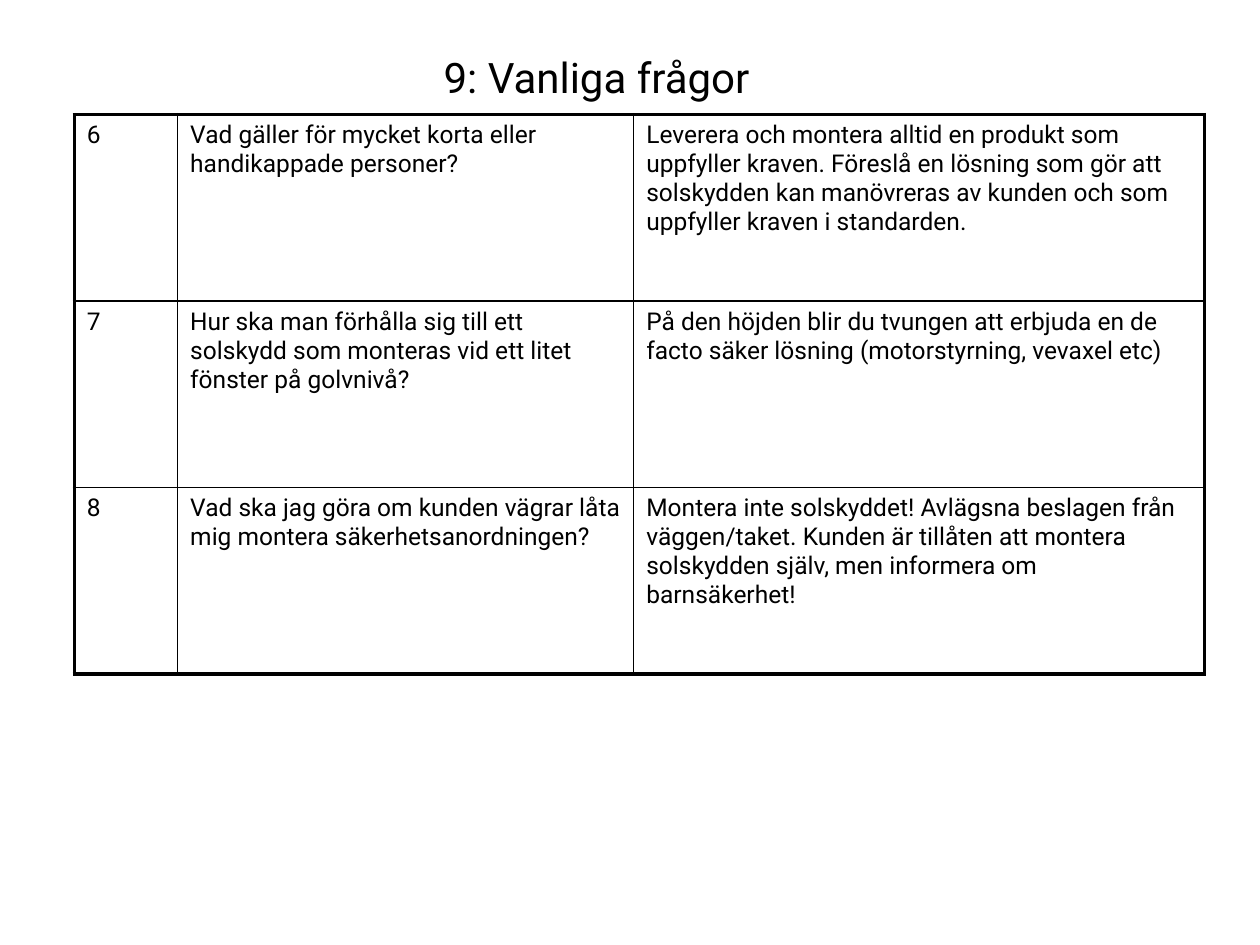
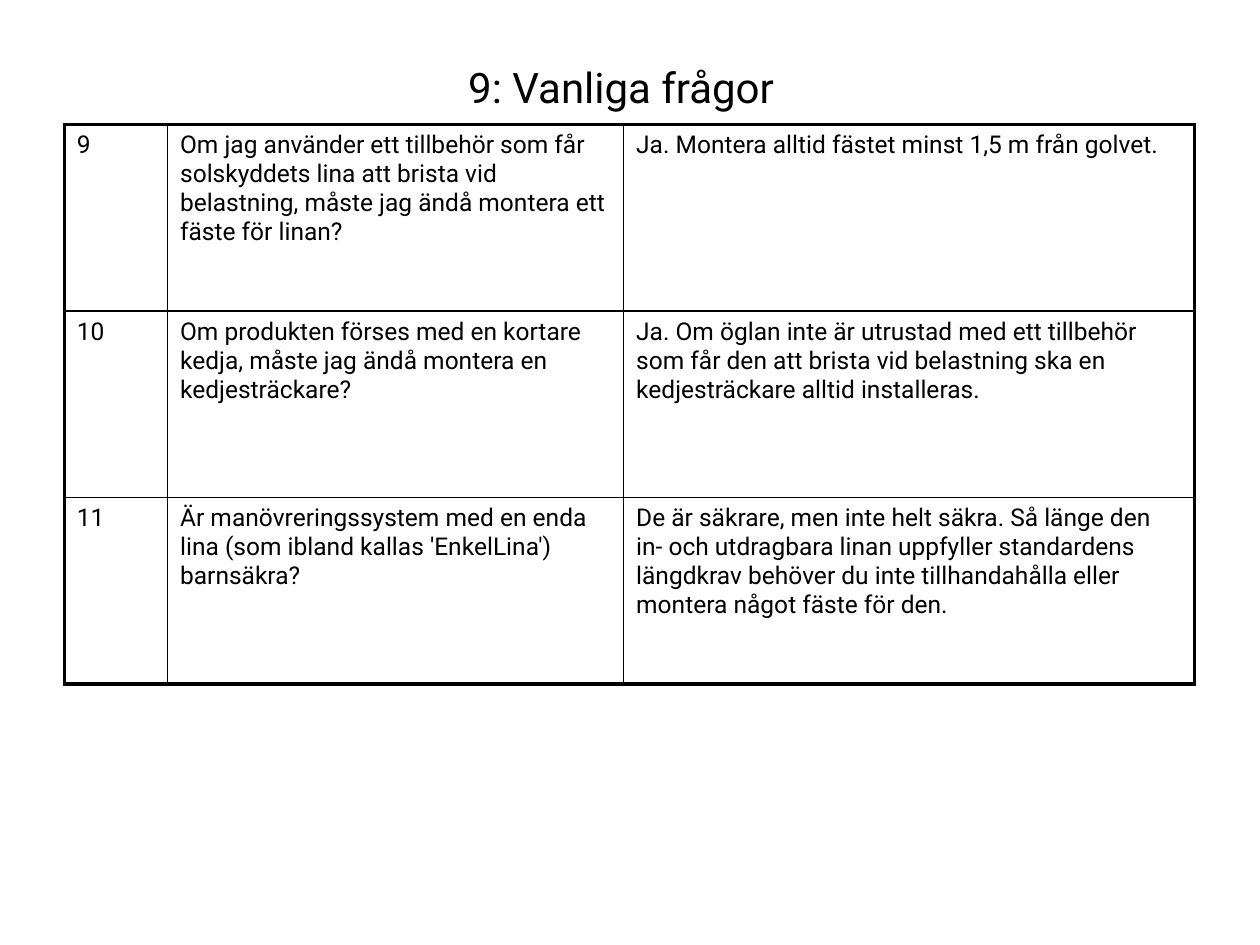
from dataclasses import dataclass

import lxml.etree
import pptx
import pptx.dml.color
import pptx.enum.text
import pptx.oxml.ns
import pptx.slide
import pptx.table
import pptx.text.text
import pptx.util

EMU_PER_PX = 9144
SLIDE_SIZE = (1000, 750)
TITLE_ONLY_LAYOUT = 5
FONT_NAME = "Roboto"
TEXT_COLOR = "000000"
BORDER_COLOR = "000000"
TITLE_TEXT = "9: Vanliga frågor"
TITLE_POINTS = 24
CELL_POINTS = 14
COLUMN_WIDTHS = (82, 362, 453)
ROW_HEIGHT = 148
OUTER_BORDER = 2.25
INNER_BORDER = 1


@dataclass(frozen=True)
class Box:
    left: int
    top: int
    width: int
    height: int


@dataclass(frozen=True)
class Question:
    number: int
    question: str
    answer: str


@dataclass(frozen=True)
class QuestionSlide:
    title_box: Box
    table_left: int
    table_top: int
    questions: tuple[Question, ...]


QUESTION_SLIDES = (
    QuestionSlide(Box(193, 21, 561, 79), 59, 91, (
        Question(
            6,
            "Vad gäller för mycket korta eller handikappade personer?",
            "Leverera och montera alltid en produkt som uppfyller kraven. "
            "Föreslå en lösning som gör att solskydden kan manövreras av kunden "
            "och som uppfyller kraven i standarden.",
        ),
        Question(
            7,
            "Hur ska man förhålla sig till ett solskydd som monteras vid ett "
            "litet fönster på golvnivå?",
            "På den höjden blir du tvungen att erbjuda en de facto säker lösning "
            "(motorstyrning, vevaxel etc)",
        ),
        Question(
            8,
            "Vad ska jag göra om kunden vägrar låta mig montera "
            "säkerhetsanordningen?",
            "Montera inte solskyddet! Avlägsna beslagen från väggen/taket. "
            "Kunden är tillåten att montera solskydden själv, men informera om "
            "barnsäkerhet!",
        ),
    )),
    QuestionSlide(Box(224, 21, 538, 95), 51, 99, (
        Question(
            9,
            "Om jag använder ett tillbehör som får solskyddets lina att brista "
            "vid belastning, måste jag ändå montera ett fäste för linan?",
            "Ja. Montera alltid fästet minst 1,5 m från golvet.",
        ),
        Question(
            10,
            "Om produkten förses med en kortare kedja, måste jag ändå montera "
            "en kedjesträckare?",
            "Ja. Om öglan inte är utrustad med ett tillbehör som får den att "
            "brista vid belastning ska en kedjesträckare alltid installeras.",
        ),
        Question(
            11,
            "Är manövreringssystem med en enda lina (som ibland kallas "
            "'EnkelLina') barnsäkra?",
            "De är säkrare, men inte helt säkra. Så länge den in- och utdragbara "
            "linan uppfyller standardens längdkrav behöver du inte "
            "tillhandahålla eller montera något fäste för den.",
        ),
    )),
)


def px(length: int) -> pptx.util.Emu:
    return pptx.util.Emu(length * EMU_PER_PX)


def color(value: str) -> pptx.dml.color.RGBColor:
    return pptx.dml.color.RGBColor.from_string(value)


def format_text(paragraph: pptx.text.text._Paragraph, points: int) -> None:
    paragraph.font.name = FONT_NAME
    paragraph.font.size = pptx.util.Pt(points)
    paragraph.font.bold = False
    paragraph.font.color.rgb = color(TEXT_COLOR)


def add_title(slide: pptx.slide.Slide, box: Box) -> None:
    title = slide.shapes.title
    title.left, title.top = px(box.left), px(box.top)
    title.width, title.height = px(box.width), px(box.height)
    title.text_frame.text = TITLE_TEXT
    title.text_frame.vertical_anchor = pptx.enum.text.MSO_ANCHOR.MIDDLE
    paragraph = title.text_frame.paragraphs[0]
    paragraph.alignment = pptx.enum.text.PP_ALIGN.CENTER
    format_text(paragraph, TITLE_POINTS)


def set_borders(cell: pptx.table._Cell, outer_sides: dict[str, bool]) -> None:
    qn = pptx.oxml.ns.qn
    properties = cell._tc.get_or_add_tcPr()
    for index, (side, is_outer) in enumerate(outer_sides.items()):
        points = OUTER_BORDER if is_outer else INNER_BORDER
        line = lxml.etree.Element(qn(f"a:ln{side}"), w=str(pptx.util.Pt(points)))
        fill = lxml.etree.SubElement(line, qn("a:solidFill"))
        lxml.etree.SubElement(fill, qn("a:srgbClr"), val=BORDER_COLOR)
        properties.insert(index, line)


def add_question_table(slide: pptx.slide.Slide, content: QuestionSlide) -> None:
    row_count, column_count = len(content.questions), len(COLUMN_WIDTHS)
    table = slide.shapes.add_table(
        row_count, column_count, px(content.table_left), px(content.table_top),
        px(sum(COLUMN_WIDTHS)), px(ROW_HEIGHT * row_count),
    ).table
    table.first_row = False
    table.horz_banding = False
    for column, width in zip(table.columns, COLUMN_WIDTHS):
        column.width = px(width)
    for row_index, question in enumerate(content.questions):
        texts = (str(question.number), question.question, question.answer)
        for column_index, text in enumerate(texts):
            cell = table.cell(row_index, column_index)
            cell.text = text
            cell.fill.background()
            format_text(cell.text_frame.paragraphs[0], CELL_POINTS)
            set_borders(cell, {
                "L": column_index == 0,
                "R": column_index == column_count - 1,
                "T": row_index == 0,
                "B": row_index == row_count - 1,
            })


def main() -> None:
    presentation = pptx.Presentation()
    presentation.slide_width, presentation.slide_height = map(px, SLIDE_SIZE)
    layout = presentation.slide_layouts[TITLE_ONLY_LAYOUT]
    for content in QUESTION_SLIDES:
        slide = presentation.slides.add_slide(layout)
        add_title(slide, content.title_box)
        add_question_table(slide, content)
    presentation.save("out.pptx")


if __name__ == "__main__":
    main()
